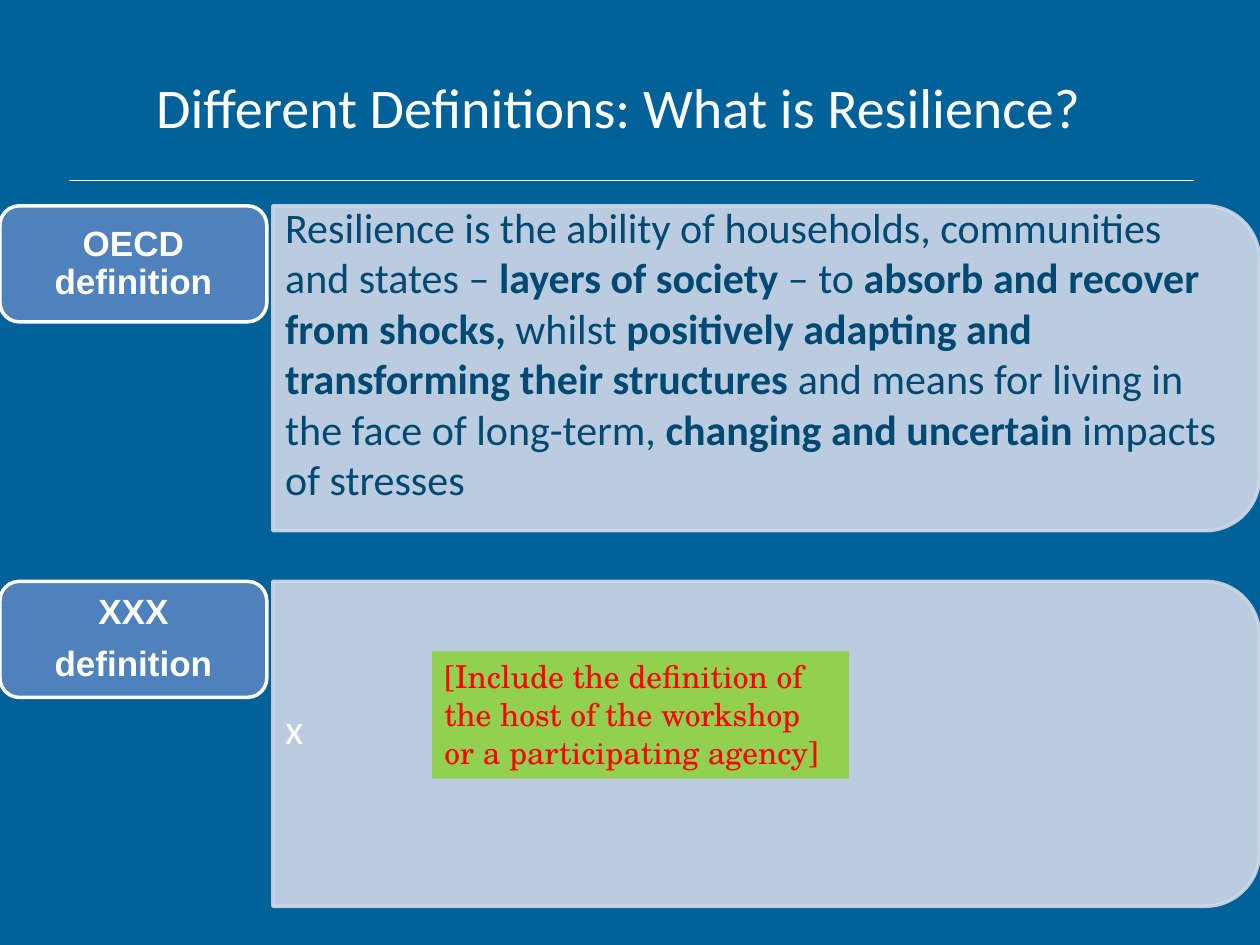
from lxml.etree import SubElement
from pptx import Presentation
from pptx.dml.color import RGBColor
from pptx.enum.shapes import MSO_CONNECTOR, MSO_SHAPE
from pptx.enum.text import MSO_ANCHOR, PP_ALIGN
from pptx.oxml.ns import qn
from pptx.util import Cm, Pt

COLORS = {
    "background": "006299",
    "white": "FFFFFF",
    "panel": "D0D8E8",
    "badge": "4F81BD",
    "body": "004973",
    "prompt": "92D050",
    "red": "FF0000",
}

FORMATS = {
    "title": {"name": "Calibri", "size": Pt(32), "color": "white"},
    "body": {"name": "Calibri", "size": Pt(24), "color": "body"},
    "placeholder": {"name": "Calibri", "size": Pt(24), "color": "white"},
    "badge": {"name": "Arial", "size": Pt(20), "bold": True, "color": "white"},
    "prompt": {"name": "TeX Gyre Schola", "size": Pt(18), "color": "red"},
}

BADGE_PARAGRAPH = {
    "alignment": PP_ALIGN.CENTER,
    "line_spacing": 0.9,
    "space_after": Pt(8),
}

OECD_TEXT = [
    ("Resilience is the ability of households, communities and states – ", False),
    ("layers of society ", True),
    ("– to ", False),
    ("absorb and recover from shocks,", True),
    (" whilst ", False),
    ("positively adapting and transforming their structures", True),
    (" and means for living in the face of long-term, ", False),
    ("changing and uncertain ", True),
    ("impacts of stresses", False),
]

DEFINITIONS = [
    (["OECD definition"], OECD_TEXT, "body"),
    (["XXX", "definition"], [("x", False)], "placeholder"),
]


def color(name):
    return RGBColor.from_string(COLORS[name])


def set_values(target, values):
    for key, value in values.items():
        if key == "color":
            target.color.rgb = color(value)
        else:
            setattr(target, key, value)


def write_spans(para, spans, style):
    for text, bold in spans:
        span = para.add_run()
        span.text = text
        set_values(span.font, {"bold": bold, **FORMATS[style]})


def add_text(page, left, top, width, height, paragraphs, style, layout=None):
    box = page.shapes.add_textbox(Cm(left), Cm(top), Cm(width), Cm(height))
    frame = box.text_frame
    set_values(frame, {"word_wrap": True, "vertical_anchor": MSO_ANCHOR.MIDDLE})
    for index, spans in enumerate(paragraphs):
        para = frame.add_paragraph() if index else frame.paragraphs[0]
        set_values(para, layout or {})
        write_spans(para, spans, style)
    return box


def add_block(page, kind, left, top, width, height, fill, line=None):
    shape = page.shapes.add_shape(kind, Cm(left), Cm(top), Cm(width), Cm(height))
    shape.shadow.inherit = False
    shape.fill.solid()
    shape.fill.fore_color.rgb = color(fill)
    if line:
        shape.line.color.rgb = color(line)
        shape.line.width = Pt(2)
    else:
        shape.line.fill.background()
    return shape


def add_heading(page, left, top, width, height):
    add_text(page, left + 1.5, top, 20.6, height - 0.08,
             [[("Different Definitions: What is Resilience?", False)]], "title")
    bottom = Cm(top + height)
    rule = page.shapes.add_connector(
        MSO_CONNECTOR.STRAIGHT, Cm(left), bottom, Cm(left + width), bottom)
    rule.line.color.rgb = color("white")
    rule.line.width = Pt(0.5)
    SubElement(rule._element.spPr, qn("a:effectLst"))


def add_panel(page, left, top, width, height, spans, style):
    shift = (width - height) / 2
    panel = add_block(page, MSO_SHAPE.ROUND_2_SAME_RECTANGLE, left + shift,
                      top - shift, height, width, "panel", "panel")
    panel.rotation = 90
    for tint in panel._element.spPr.iter(qn("a:srgbClr")):
        SubElement(tint, qn("a:alpha"), val="90000")
    add_text(page, left, top, width - 0.36, height - 0.63, [spans], style)


def add_badge(page, left, top, width, height, lines):
    add_block(page, MSO_SHAPE.ROUNDED_RECTANGLE, left, top, width, height,
              "badge", "white")
    label = add_text(page, left + 0.19, top + 0.11, width - 0.38, height - 0.22,
                     [[(line, True)] for line in lines], "badge", BADGE_PARAGRAPH)
    set_values(label.text_frame, {
        "margin_left": Cm(0.2), "margin_right": Cm(0.2),
        "margin_top": Cm(0.1), "margin_bottom": Cm(0.1),
    })


def add_definition(page, left, top, width, height, lines, spans, style):
    add_panel(page, left + 5.5, top, width - 5.5, height, spans, style)
    add_badge(page, left, top, 5.38, 2.34, lines)


def add_prompt(page, left, top, width, height):
    prompt = add_block(page, MSO_SHAPE.RECTANGLE, left, top, width, height, "prompt")
    frame = prompt.text_frame
    set_values(frame, {"word_wrap": True, "vertical_anchor": MSO_ANCHOR.TOP})
    para = frame.paragraphs[0]
    para.alignment = PP_ALIGN.LEFT
    text = "[Include the definition of the host of the workshop or a participating agency]"
    write_spans(para, [(text, False)], "prompt")


def main():
    deck = Presentation()
    deck.slide_width, deck.slide_height = Cm(25.4), Cm(19.05)
    page = deck.slides.add_slide(deck.slide_layouts[6])
    page.background.fill.solid()
    page.background.fill.fore_color.rgb = color("background")
    add_heading(page, 1.4, 0.71, 22.66, 2.92)
    for index, definition in enumerate(DEFINITIONS):
        add_definition(page, 0, 4.15 + 7.57 * index, 25.39, 6.55, *definition)
    add_prompt(page, 8.71, 13.13, 8.41, 2.57)
    deck.save("out.pptx")


if __name__ == "__main__":
    main()
